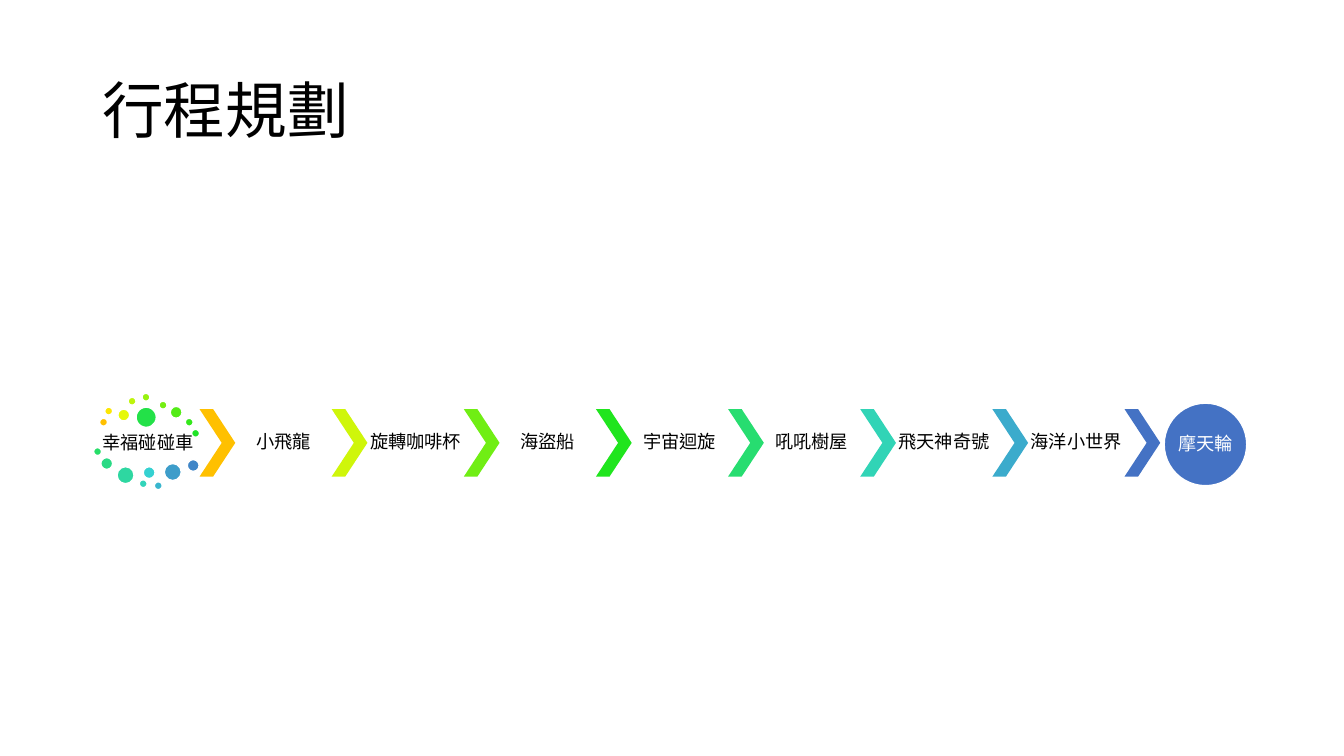
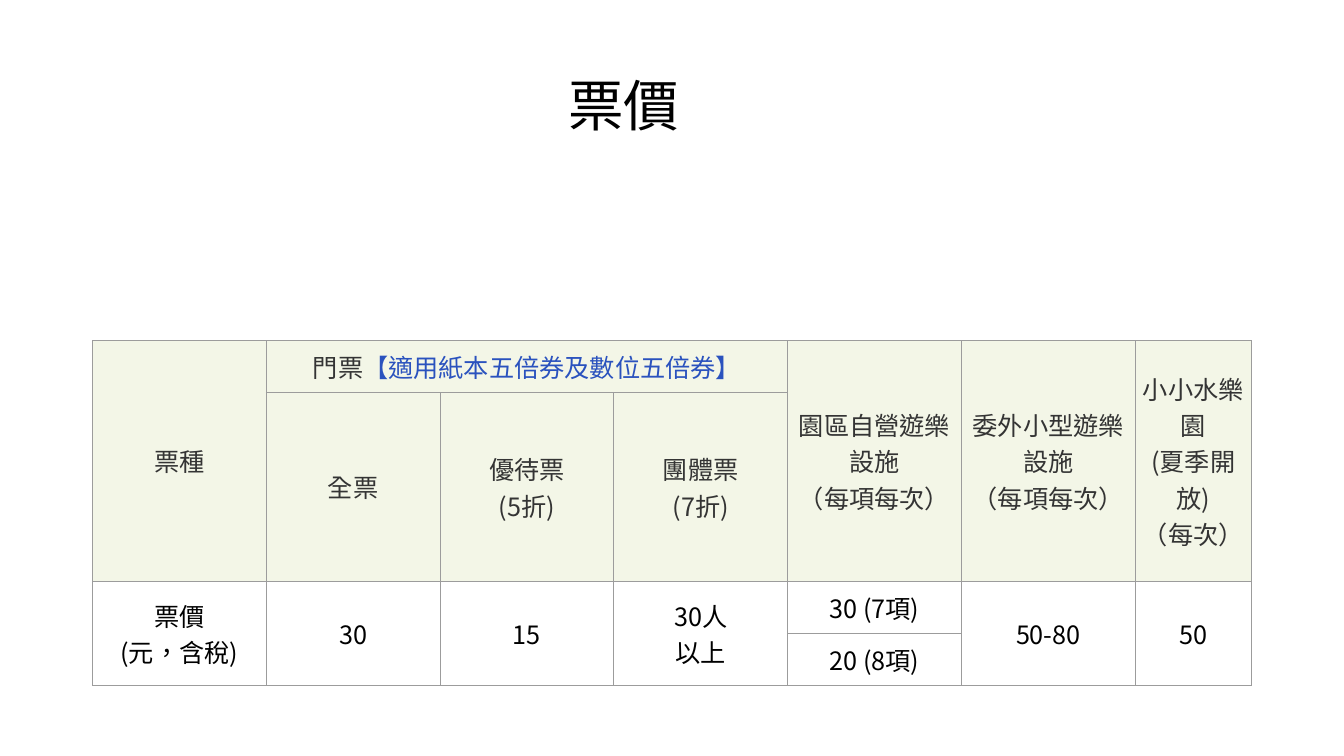
"""Builds the itinerary and ticket price slides of an amusement park trip."""
from dataclasses import dataclass

from lxml.etree import SubElement
from pptx import Presentation
from pptx.dml.color import RGBColor
from pptx.enum.shapes import MSO_SHAPE
from pptx.enum.text import MSO_ANCHOR, PP_ALIGN
from pptx.oxml.ns import qn
from pptx.shapes.autoshape import Shape
from pptx.slide import Slide
from pptx.table import _Cell
from pptx.text.text import TextFrame, _Paragraph
from pptx.util import Cm, Pt

BLACK, WHITE, BLUE = "000000", "FFFFFF", "4472C4"
HEADER_TEXT, HEADER_FILL, VOUCHER_TEXT = "343434", "F3F6E7", "2A52BE"
BORDER = "9C9C9C"
LATIN_FONT, CHINESE_FONT = "Calibri", "Noto Sans CJK JP"


@dataclass(frozen=True)
class Box:
    left: float
    top: float
    width: float
    height: float

    def lengths(self) -> tuple[Cm, Cm, Cm, Cm]:
        return Cm(self.left), Cm(self.top), Cm(self.width), Cm(self.height)


@dataclass(frozen=True)
class Dot:
    left: float
    top: float
    size: float
    color: str


@dataclass(frozen=True)
class Stop:
    name: str
    chevron_color: str


@dataclass(frozen=True)
class Span:
    text: str
    color: str


@dataclass(frozen=True)
class Entry:
    row: int
    column: int
    spans: tuple[Span, ...]
    rows: int = 1
    columns: int = 1


SMALL, MEDIUM, LARGE, LARGEST = 0.2, 0.3, 0.43, 0.51
DOTS = (
    Dot(2.51, 10.54, SMALL, "FFC000"),
    Dot(2.64, 10.26, SMALL, "FCE604"),
    Dot(2.97, 10.31, MEDIUM, "E6F808"),
    Dot(3.23, 10.01, SMALL, "BEF50C"),
    Dot(3.58, 9.91, SMALL, "98F20F"),
    Dot(4.01, 10.11, SMALL, "75EE13"),
    Dot(4.29, 10.24, MEDIUM, "53EB17"),
    Dot(4.67, 10.54, SMALL, "34E81B"),
    Dot(4.83, 10.82, SMALL, "1FE426"),
    Dot(3.43, 10.26, LARGEST, "23E148"),
    Dot(2.36, 11.28, SMALL, "26DE68"),
    Dot(2.54, 11.53, MEDIUM, "2ADA85"),
    Dot(2.95, 11.76, LARGE, "2ED7A1"),
    Dot(3.51, 12.09, SMALL, "32D4BA"),
    Dot(3.61, 11.76, MEDIUM, "35D1D1"),
    Dot(3.89, 12.14, SMALL, "39B6CE"),
    Dot(4.14, 11.68, LARGE, "3D9DCA"),
    Dot(4.72, 11.58, MEDIUM, "4086C7"),
)

STOPS = (
    Stop("幸福碰碰車", "FFC000"),
    Stop("小飛龍", "CFF60A"),
    Stop("旋轉咖啡杯", "70EE14"),
    Stop("海盜船", "20E51E"),
    Stop("宇宙迴旋", "27DD70"),
    Stop("吼吼樹屋", "31D4B6"),
    Stop("飛天神奇號", "3BABCC"),
    Stop("海洋小世界", BLUE),
)
LAST_STOP = "摩天輪"
CHEVRON = Box(5.03, 10.31, 0.9, 1.7)
LABEL_WIDTH, STOP_PITCH = 2.44, 3.33


def heading(text: str) -> tuple[Span, ...]:
    return (Span(text, HEADER_TEXT),)


def price(text: str) -> tuple[Span, ...]:
    return (Span(text, BLACK),)


HEADER_ROWS = 2
COLUMN_WIDTHS = (4.38,) * 6 + (2.92,)
ROW_HEIGHTS = (1.31, 4.76, 1.31, 1.31)
ENTRIES = (
    Entry(0, 0, heading("票種"), rows=2),
    Entry(0, 1, heading("門票") + (Span("【適用紙本五倍券及數位五倍券】", VOUCHER_TEXT),), columns=3),
    Entry(0, 4, heading("園區自營遊樂設施\n（每項每次）"), rows=2),
    Entry(0, 5, heading("委外小型遊樂設施\n（每項每次）"), rows=2),
    Entry(0, 6, heading("小小水樂園\n(夏季開放)\n（每次）"), rows=2),
    Entry(1, 1, heading("全票")),
    Entry(1, 2, heading("優待票\n(5折)")),
    Entry(1, 3, heading("團體票\n(7折)")),
    Entry(2, 0, price("票價\n(元，含稅)"), rows=2),
    Entry(2, 1, price("30"), rows=2),
    Entry(2, 2, price("15"), rows=2),
    Entry(2, 3, price("30人\n以上"), rows=2),
    Entry(2, 4, price("30 (7項)")),
    Entry(3, 4, price("20 (8項)")),
    Entry(2, 5, price("50-80"), rows=2),
    Entry(2, 6, price("50"), rows=2),
)


def rgb(color: str) -> RGBColor:
    return RGBColor.from_string(color)


def add_text(paragraph: _Paragraph, text: str, *, size: float, color: str = BLACK,
             font: str = LATIN_FONT, align: PP_ALIGN = PP_ALIGN.CENTER,
             spacing: float | None = None) -> None:
    paragraph.alignment = align
    if spacing:
        paragraph.line_spacing = spacing
    for index, line in enumerate(text.split("\n")):
        if index:
            paragraph.add_line_break()
        span = paragraph.add_run()
        span.text = line
        span.font.size = Pt(size)
        span.font.name = font
        span.font.color.rgb = rgb(color)
        properties = span.font._element
        properties.set("lang", "zh-TW")
        SubElement(properties, qn("a:ea"), typeface=CHINESE_FONT)


def set_frame(frame: TextFrame, margin: float) -> None:
    frame.word_wrap = True
    frame.vertical_anchor = MSO_ANCHOR.MIDDLE
    frame.margin_left = frame.margin_right = Cm(margin)
    frame.margin_top = frame.margin_bottom = Cm(margin)


def add_label(page: Slide, box: Box, text: str, *, margin: float = 0.05, **text_format) -> None:
    frame = page.shapes.add_textbox(*box.lengths()).text_frame
    set_frame(frame, margin)
    add_text(frame.paragraphs[0], text, spacing=0.9, **text_format)


def add_title(page: Slide, box: Box, text: str, *, size: float, font: str) -> None:
    add_label(page, box, text, margin=0.25, size=size, font=font, align=PP_ALIGN.LEFT)


def add_figure(page: Slide, kind: MSO_SHAPE, box: Box, color: str,
               outline: str | None = None) -> Shape:
    figure = page.shapes.add_shape(kind, *box.lengths())
    figure.shadow.inherit = False
    figure.fill.solid()
    figure.fill.fore_color.rgb = rgb(color)
    if outline:
        figure.line.color.rgb = rgb(outline)
        figure.line.width = Pt(1)
    else:
        figure.line.fill.background()
    return figure


def style_cell(cell: _Cell, color: str) -> None:
    properties = cell._tc.get_or_add_tcPr()
    for side in ("lnL", "lnR", "lnT", "lnB"):
        border = SubElement(properties, qn(f"a:{side}"), w=str(Pt(0.75)))
        fill = SubElement(border, qn("a:solidFill"))
        SubElement(fill, qn("a:srgbClr"), val=BORDER)
    cell.fill.solid()
    cell.fill.fore_color.rgb = rgb(color)


def build_itinerary(page: Slide) -> None:
    add_title(page, Box(2.33, 1.01, 29.21, 3.68), "行程規劃", size=44, font=LATIN_FONT)
    for dot in DOTS:
        add_figure(page, MSO_SHAPE.OVAL, Box(dot.left, dot.top, dot.size, dot.size),
                   dot.color, WHITE)
    for index, stop in enumerate(STOPS):
        left = CHEVRON.left + index * STOP_PITCH
        label = Box(left - LABEL_WIDTH, CHEVRON.top, LABEL_WIDTH, CHEVRON.height)
        if index == 0:
            label = Box(2.51, 10.77, LABEL_WIDTH, 0.81)
        add_label(page, label, stop.name, size=13)
        chevron = add_figure(page, MSO_SHAPE.CHEVRON,
                             Box(left, CHEVRON.top, CHEVRON.width, CHEVRON.height),
                             stop.chevron_color)
        chevron.adjustments[0] = 0.62
    circle = add_figure(page, MSO_SHAPE.OVAL, Box(29.34, 10.16, 2.08, 2.08), BLUE, WHITE)
    set_frame(circle.text_frame, 0)
    add_text(circle.text_frame.paragraphs[0], LAST_STOP, size=13, color=WHITE, spacing=0.9)


def build_prices(page: Slide) -> None:
    add_title(page, Box(14.07, 1.3, 3.53, 2.87), "票價", size=39.6, font=CHINESE_FONT)
    area = Box(2.33, 8.58, sum(COLUMN_WIDTHS), sum(ROW_HEIGHTS))
    table = page.shapes.add_table(len(ROW_HEIGHTS), len(COLUMN_WIDTHS), *area.lengths()).table
    table.first_row = table.horz_banding = False
    for column, width in zip(table.columns, COLUMN_WIDTHS):
        column.width = Cm(width)
    for index, (row, height) in enumerate(zip(table.rows, ROW_HEIGHTS)):
        row.height = Cm(height)
        for cell in row.cells:
            style_cell(cell, HEADER_FILL if index < HEADER_ROWS else WHITE)
    for entry in ENTRIES:
        cell = table.cell(entry.row, entry.column)
        if entry.rows * entry.columns > 1:
            cell.merge(table.cell(entry.row + entry.rows - 1, entry.column + entry.columns - 1))
        cell.vertical_anchor = MSO_ANCHOR.MIDDLE
        cell.margin_left = cell.margin_right = Cm(0.08)
        cell.margin_top = cell.margin_bottom = Cm(0.08)
        for span in entry.spans:
            add_text(cell.text_frame.paragraphs[0], span.text, size=18, color=span.color,
                     font=CHINESE_FONT)


def main() -> None:
    deck = Presentation()
    deck.slide_width, deck.slide_height = Cm(33.87), Cm(19.05)
    for build in (build_itinerary, build_prices):
        build(deck.slides.add_slide(deck.slide_layouts[6]))
    deck.save("out.pptx")


if __name__ == "__main__":
    main()
